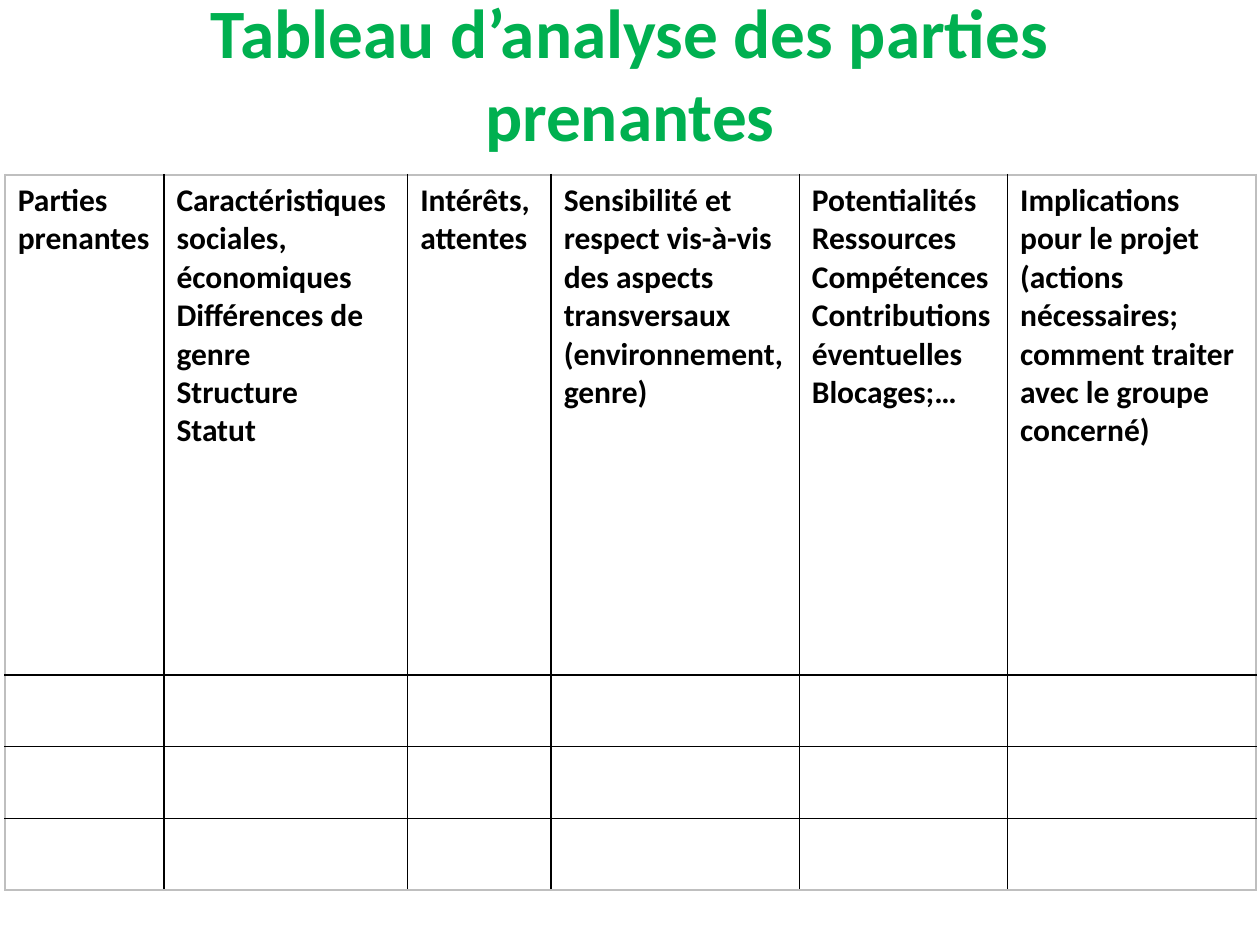
"""Build a one-slide stakeholder analysis table."""
from dataclasses import dataclass

from lxml.etree import SubElement
from pptx import Presentation
from pptx.dml.color import RGBColor
from pptx.enum.text import MSO_ANCHOR, PP_ALIGN
from pptx.oxml.ns import qn
from pptx.util import Pt


@dataclass(frozen=True)
class Theme:
    font: str = "Calibri"
    heading: str = "00B050"
    text: str = "000000"
    grid: str = "000000"
    frame: str = "BFBFBF"
    heading_size: float = 39.6
    text_size: float = 18
    grid_width: float = 1
    frame_width: float = 1.5


class SlideBuilder:
    def __init__(self, slide, theme):
        self.slide = slide
        self.theme = theme

    def style(self, paragraph, size, color):
        font = paragraph.font
        font.name, font.size, font.bold = self.theme.font, Pt(size), True
        font.color.rgb = RGBColor.from_string(color)

    def heading(self, text, left, top, width, height):
        frame = self.slide.shapes.add_textbox(Pt(left), Pt(top), Pt(width), Pt(height)).text_frame
        frame.word_wrap = True
        frame.vertical_anchor = MSO_ANCHOR.MIDDLE
        frame.text = text
        paragraph = frame.paragraphs[0]
        paragraph.alignment = PP_ALIGN.CENTER
        self.style(paragraph, self.theme.heading_size, self.theme.heading)

    def border(self, cell, side, outer):
        theme = self.theme
        width = theme.frame_width if outer else theme.grid_width
        line = SubElement(cell._tc.get_or_add_tcPr(), qn(f"a:ln{side}"), w=str(Pt(width)))
        fill = SubElement(line, qn("a:solidFill"))
        SubElement(fill, qn("a:srgbClr"), val=theme.frame if outer else theme.grid)

    def table(self, headers, left, top, widths, heights):
        table = self.slide.shapes.add_table(
            len(heights), len(widths), Pt(left), Pt(top), Pt(sum(widths)), Pt(sum(heights))
        ).table
        table.first_row = table.horz_banding = False
        for column, width in zip(table.columns, widths):
            column.width = Pt(width)
        for row, height in zip(table.rows, heights):
            row.height = Pt(height)
        last_row, last_column = len(heights) - 1, len(widths) - 1
        for r in range(len(heights)):
            for c, header in enumerate(headers):
                cell = table.cell(r, c)
                if r == 0:
                    cell.text = header
                for paragraph in cell.text_frame.paragraphs:
                    self.style(paragraph, self.theme.text_size, self.theme.text)
                edges = {"L": c == 0, "R": c == last_column, "T": r == 0, "B": r == last_row}
                for side, outer in edges.items():
                    self.border(cell, side, outer)
                cell.fill.background()


HEADERS = [
    "Parties prenantes",
    "Caractéristiques\nsociales,\néconomiques\nDifférences de genre\nStructure\nStatut",
    "Intérêts, attentes",
    "Sensibilité et respect vis-à-vis des aspects transversaux (environnement, genre)",
    "Potentialités\nRessources\nCompétences\nContributions éventuelles\nBlocages;…",
    "Implications pour le projet\n(actions nécessaires; comment traiter avec le groupe concerné)",
]


def main():
    presentation = Presentation()
    presentation.slide_width, presentation.slide_height = Pt(720), Pt(540)
    slide = presentation.slides.add_slide(presentation.slide_layouts[6])
    builder = SlideBuilder(slide, Theme())
    builder.table(HEADERS, 3, 100, [90.7, 139.3, 82, 141.8, 119, 141.8], [285.6] + [41] * 3)
    builder.heading("Tableau d’analyse des parties prenantes", 36, 6, 648, 71)
    presentation.save("out.pptx")


if __name__ == "__main__":
    main()
